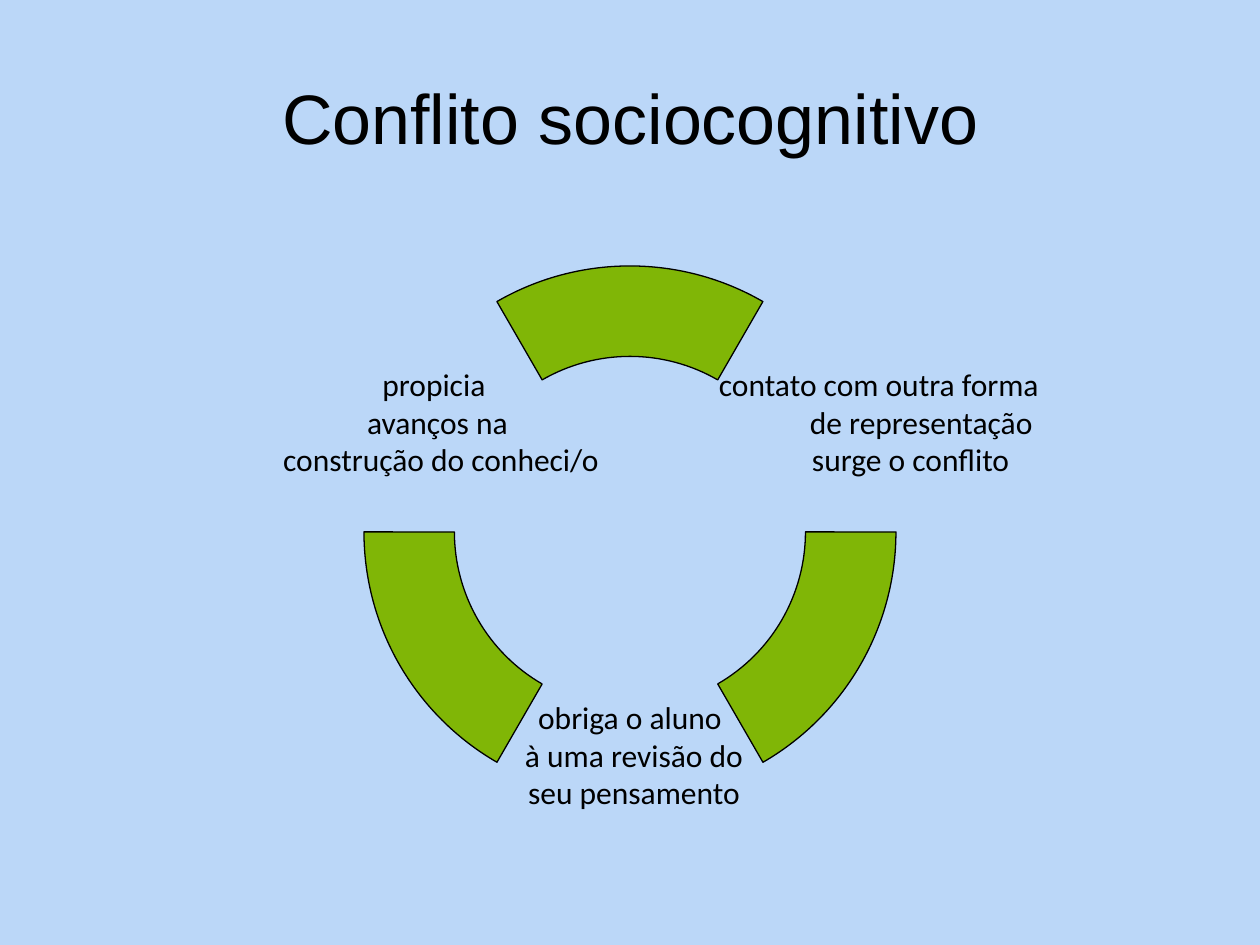
from pptx import Presentation
from pptx import util as u
from pptx.dml import color
from pptx.enum import shapes, text

COLORS = {"sky": "BBD7F8", "green": "80B606", "black": "000000"}
CENTER, LEFT = text.PP_ALIGN.CENTER, text.PP_ALIGN.LEFT


def px(n):
    return u.Emu(round(n * 914400 / 126))


def write(frame, lines, font="Calibri", size=18, align=CENTER, indents=(0, 0, 0)):
    frame.word_wrap = True
    frame.vertical_anchor = text.MSO_ANCHOR.MIDDLE
    frame.margin_left = frame.margin_right = 0
    for i, (line, indent) in enumerate(zip(lines, indents)):
        paragraph = frame.paragraphs[0] if i == 0 else frame.add_paragraph()
        paragraph.alignment = align
        if indent:
            paragraph._p.get_or_add_pPr().set("marL", str(px(indent)))
        run = paragraph.add_run()
        run.text = line
        run.font.name = font
        run.font.size = u.Pt(size)
        run.font.color.rgb = color.RGBColor.from_string(COLORS["black"])


prs = Presentation()
prs.slide_width, prs.slide_height = px(1260), px(945)
slide = prs.slides.add_slide(prs.slide_layouts[5])
slide.background.fill.solid()
slide.background.fill.fore_color.rgb = color.RGBColor.from_string(COLORS["sky"])

heading = slide.shapes.title
heading.left, heading.top, heading.width, heading.height = px(63), px(38), px(1134), px(158)
write(heading.text_frame, ["Conflito sociocognitivo"], font="Arial", size=40)

for start in (240, 0, 120):
    arc = slide.shapes.add_shape(
        shapes.MSO_SHAPE.BLOCK_ARC, px(364), px(266), px(532), px(532))
    arc.adjustments[0] = start * 0.6
    arc.adjustments[1] = (start + 60) * 0.6
    arc.adjustments[2] = 0.17
    arc.shadow.inherit = False
    arc.fill.solid()
    arc.fill.fore_color.rgb = color.RGBColor.from_string(COLORS["green"])
    arc.line.color.rgb = color.RGBColor.from_string(COLORS["black"])
    arc.line.width = u.Pt(0.75)

stages = [
    (719, 340, LEFT, (0, 91, 93),
     ["contato com outra forma", "de representação", "surge o conflito"]),
    (460, 673, CENTER, (0, 8, 8),
     ["obriga o aluno", "à uma revisão do", "seu pensamento"]),
    (264, 340, CENTER, (0, 7, 14),
     ["propicia", "avanços na", "construção do conheci/o"]),
]
for left, top, align, indents, lines in stages:
    stage = slide.shapes.add_textbox(px(left), px(top), px(340), px(163))
    write(stage.text_frame, lines, align=align, indents=indents)

prs.save("out.pptx")
